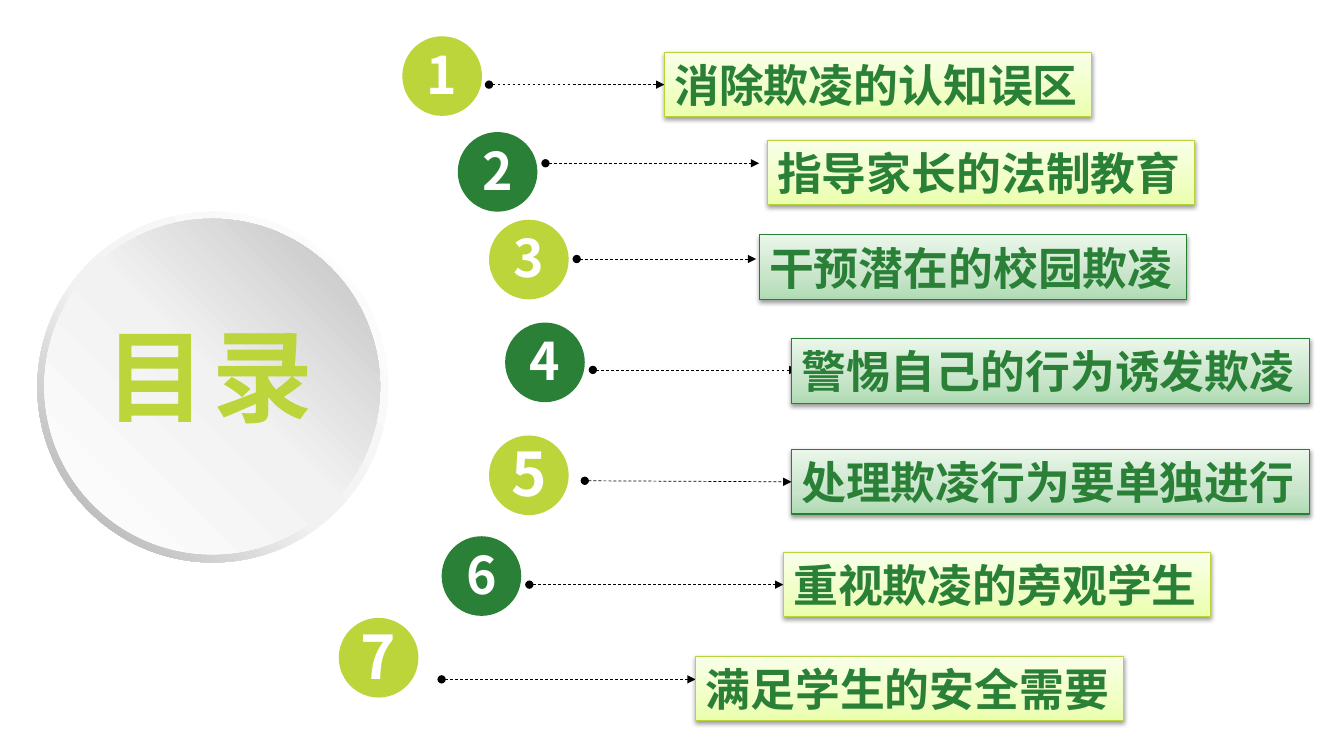
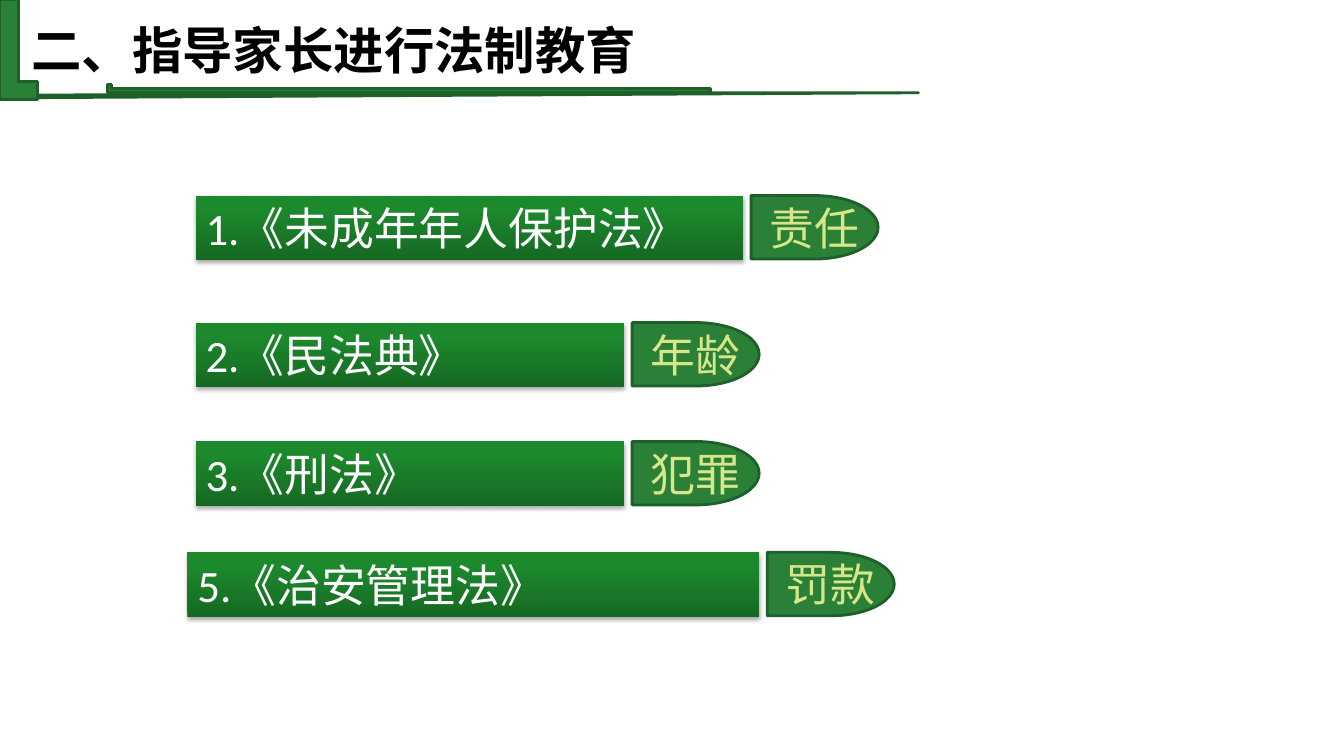
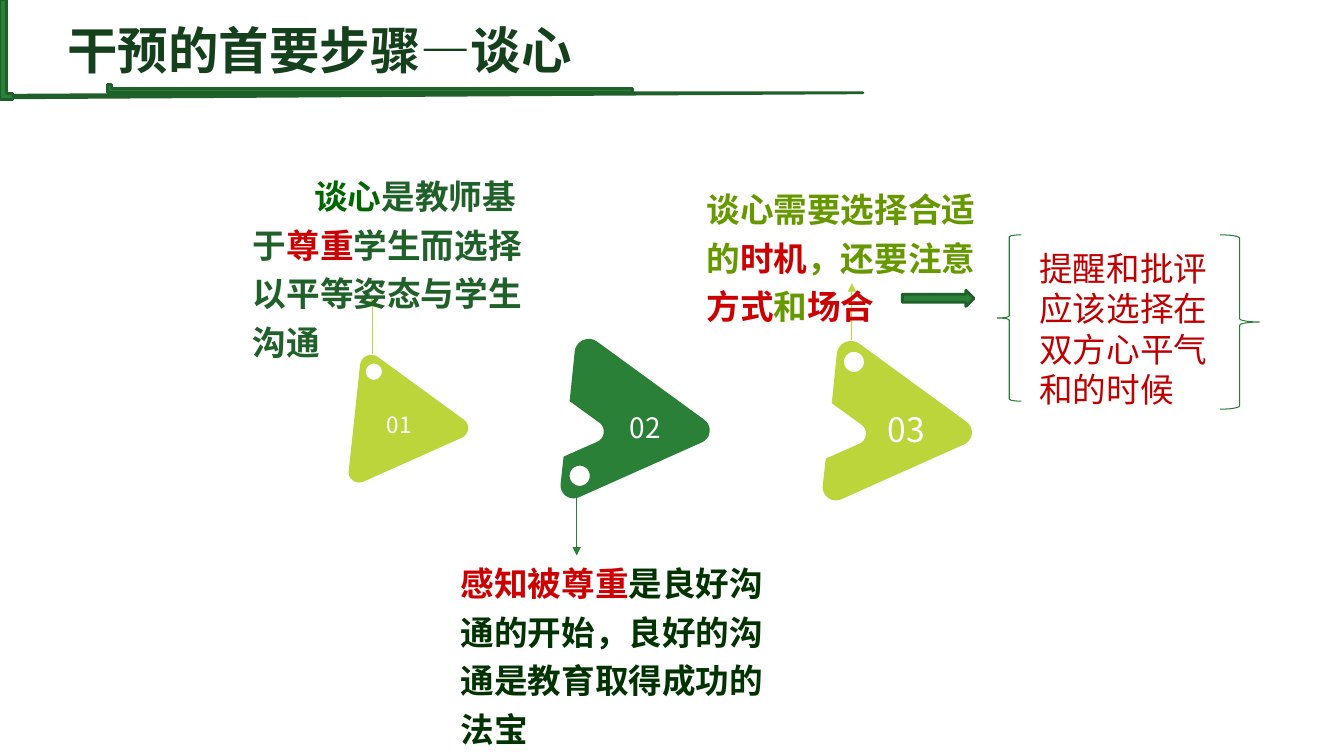
from math import cos, dist, pi, sin

from pptx import Presentation
from pptx.dml.color import RGBColor
from pptx.enum.dml import MSO_LINE
from pptx.enum.shapes import MSO_CONNECTOR, MSO_SHAPE
from pptx.enum.text import MSO_ANCHOR, MSO_AUTO_SIZE, PP_ALIGN
from pptx.oxml import parse_xml
from pptx.oxml.ns import nsdecls, qn
from pptx.util import Emu, Pt

PX = 9144  # 100 px to the inch


class Theme:
    lime, green, dark = "BBD53B", "2A8037", "1F5F29"
    white, black, red, crimson = "FFFFFF", "000000", "CC0000", "C00000"
    edge, pale, ink, moss = "277F34", "D6E689", "15401C", "206029"
    leaf, olive, deep = "006600", "669900", "003300"
    latin, hans, jp = "Calibri", "Noto Sans CJK SC", "Noto Sans CJK JP"
    hero, head, item, body = 72, 36, 32, 24
    # gradients: stops, angle
    tints = {
        "lime": ([(0, "EAFFAC"), (35, "F0FFC4"), (100, "F9FFE9")], 270),
        "green": ([(0, "AFDBB3"), (35, "C8E5CA"), (100, "EAF6EA")], 270),
        "bar": ([(0, "166922"), (80, "1C892D"), (100, "1A8B2B")], 270),
        "ring": ([(0, "FFFFFF"), (55, "F2F2F2"), (100, "A6A6A6")], 135),
        "dial": ([(0, "FFFFFF"), (51, "F2F2F2"), (100, "BFBFBF")], 315),
    }
    edges = {"lime": "B9D436", "green": "277F34"}


T = Theme

# Content
TOPICS = [  # text, tint, disc at, digit size, line from x, to x, y, box at, joined
    ("消除欺凌的认知误区", "lime", (399, 36), 37, (485, 659, 84), (659, 52), True),
    ("指导家长的法制教育", "lime", (454, 131), 37, (541, 753, 162), (761, 139), False),
    ("干预潜在的校园欺凌", "green", (485, 218), 37, (572, 750, 257), (753, 233), False),
    ("警惕自己的行为诱发欺凌", "green", (501, 320), 37, (588, 791, 367), (785, 336), False),
    ("处理欺凌行为要单独进行", "green", (485, 432), 43, (580, 785, 477), (785, 446), True),
    ("重视欺凌的旁观学生", "lime", (438, 532), 37, (525, 777, 580), (777, 548), True),
    ("满足学生的安全需要", "lime", (336, 613), 43, (438, 690, 674), (690, 651), False),
]
LAWS = [  # text, tag, left, top, width
    ("1.《未成年年人保护法》", "责任", 194, 194, 543),
    ("2.《民法典》", "年龄", 194, 320, 425),
    ("3.《刑法》", "犯罪", 194, 438, 425),
    ("5.《治安管理法》", "罚款", 186, 548, 567),
]
STEPS = [  # label, size, colour, at, scale, notch, hole, label middle, line x, from y, to y
    ("01", 16, T.lime, (346, 352), 0.8, False, (31, 21), (396, 421), (369, 351, 296)),
    ("02", 20, T.green, (556, 336), 1, True, (19, 136), (640, 424), (572, 494, 551)),
    ("03", 24, T.lime, (816, 338), 1, True, (31, 21), (899, 426), (845, 337, 281)),
]
NOTES = [  # place, first-line indent, runs
    ((241, 162, 306, 204), 61, [
        ("谈心", T.leaf), ("是教师基于", T.moss), ("尊重", T.red),
        ("学生而选择以平等姿态与学生沟通", T.moss)]),
    ((691, 175, 306, 156), 0, [
        ("谈心需要选择合适的", T.olive), ("时机", T.red), ("，还要注意", T.olive),
        ("方式", T.red), ("和", T.olive), ("场合", T.red)]),
    ((447, 546, 337, 204), 0, [
        ("感知被尊重", T.red),
        ("是良好沟通的开始，良好的沟通是教育取得成功的法宝", T.deep)]),
]
REMIND = "提醒和批评应该选择在双方心平气和的时候"

# Arrowhead corners: x, y, rounding radius
TIP = [(16.5, -11.5, 14), (160.8, 93.7, 13), (-2.5, 166.6, 13)]
NOTCH = [(3, 117, 0), (53.9, 94.5, 11), (9, 62, 0)]


def emu(*vals):
    return [Emu(round(v * PX)) for v in vals]


def rgb(code):
    return RGBColor.from_string(code)


# Shared drawing helpers
def paint(shape, fill):
    if fill is None:
        shape.fill.background()
    elif fill in T.tints:
        stops, angle = T.tints[fill]
        shape.fill.gradient()
        grad = shape._element.spPr.find(qn("a:gradFill"))
        for child in list(grad):
            grad.remove(child)
        gs = "".join(f'<a:gs pos="{p * 1000}"><a:srgbClr val="{c}"/></a:gs>'
                     for p, c in stops)
        grad.append(parse_xml(f'<a:gsLst {nsdecls("a")}>{gs}</a:gsLst>'))
        grad.append(parse_xml(
            f'<a:lin {nsdecls("a")} ang="{angle * 60000}" scaled="0"/>'))
    else:
        shape.fill.solid()
        shape.fill.fore_color.rgb = rgb(fill)


def style(shape, fill, line=None, width=0.75, shade=None):
    paint(shape, fill)
    if line:
        shape.line.color.rgb = rgb(line)
        shape.line.width = Pt(width)
    else:
        shape.line.fill.background()
    shape.shadow.inherit = False
    if shade:
        alpha, gap = shade
        shape._element.spPr.find(qn("a:effectLst")).append(parse_xml(
            f'<a:outerShdw {nsdecls("a")} blurRad="40000" dist="{gap}" '
            f'dir="5400000" rotWithShape="0"><a:srgbClr val="{T.black}">'
            f'<a:alpha val="{alpha * 1000}"/></a:srgbClr></a:outerShdw>'))
    return shape


def draw(slide, kind, box, fill, line=None, width=0.75, shade=None):
    shape = slide.shapes.add_shape(kind, *emu(*box))
    return style(shape, fill, line, width, shade)


def write(shape, runs, size, font=T.latin, bold=False, align=PP_ALIGN.LEFT,
          anchor=MSO_ANCHOR.MIDDLE, wrap=True):
    frame = shape.text_frame
    frame.word_wrap = wrap
    frame.auto_size = MSO_AUTO_SIZE.NONE
    frame.vertical_anchor = anchor
    para = frame.paragraphs[0]
    para.alignment = align
    for text, color in runs:
        run = para.add_run()
        run.text = text
        face = run.font
        face.size, face.bold, face.name = Pt(size), bold, font
        face.color.rgb = rgb(color)
        run._r.get_or_add_rPr().find(qn("a:latin")).addnext(
            parse_xml(f'<a:ea {nsdecls("a")} typeface="{font}"/>'))
    return para


def label(slide, box, *args, **opts):
    return write(slide.shapes.add_textbox(*emu(*box)), *args, **opts)


def arrow(slide, start, end, color, width, head=None):
    link = slide.shapes.add_connector(MSO_CONNECTOR.STRAIGHT, *emu(*start, *end))
    link.line.color.rgb = rgb(color)
    link.line.width = Pt(width)
    if head:
        link.line.dash_style = MSO_LINE.DASH
    ln = link._element.spPr.find(qn("a:ln"))
    for tag, kind in (("headEnd", head), ("tailEnd", "triangle")):
        if kind:
            ln.append(parse_xml(f'<a:{tag} {nsdecls("a")} type="{kind}"/>'))
    link._element.spPr.append(parse_xml(f'<a:effectLst {nsdecls("a")}/>'))
    return link


def title(slide, box, text, size, color, font):
    shape = slide.shapes.title
    shape.left, shape.top, shape.width, shape.height = emu(*box)
    return write(shape, [(text, color)], size, font, True)


def header(slide, left, text, color, font, stripe, step, post):
    title(slide, (left, 13, 732, 71), text, T.head, color, font)
    for kind, box in ((MSO_SHAPE.DIAGONAL_STRIPE, (13, 92, stripe, 5)),
                      (MSO_SHAPE.CORNER, (107, 84, step, 8)),
                      (MSO_SHAPE.CORNER, (0, 0, post, 99))):
        draw(slide, kind, box, T.green, T.dark, 2)


# Arrowhead outline with rounded corners
def toward(a, b, span):
    part = span / dist(a, b)
    return a[0] + (b[0] - a[0]) * part, a[1] + (b[1] - a[1]) * part


def outline(corners, parts=8):
    pts = []
    for i, (x, y, r) in enumerate(corners):
        c, prev, nxt = (x, y), corners[i - 1][:2], corners[(i + 1) % len(corners)][:2]
        if not r:
            pts.append(c)
            continue
        u, v = toward(c, prev, 1), toward(c, nxt, 1)
        w = dist(u, v) / 2  # sine of the half angle
        cut = r * (1 - w * w) ** 0.5 / w
        a, b = toward(c, prev, cut), toward(c, nxt, cut)
        for k in range(parts + 1):
            t = k / parts
            f, g, h = (1 - t) ** 2, 2 * w * t * (1 - t), t * t
            pts.append(tuple((f * a[n] + g * c[n] + h * b[n]) / (f + g + h)
                             for n in (0, 1)))
    return pts


def pointer(slide, at, scale, notch, hole, color):
    ring = [(hole[0] + 10 * cos(k * pi / 16), hole[1] - 10 * sin(k * pi / 16))
            for k in range(32)]
    rim, ring = ([emu(at[0] + x * scale, at[1] + y * scale) for x, y in pts]
                 for pts in (outline(TIP + NOTCH * notch), ring))
    form = slide.shapes.build_freeform(*rim[0])
    form.add_line_segments(rim[1:])
    form.move_to(*ring[0])
    form.add_line_segments(ring[1:])
    style(form.convert_to_shape(), color)


# Slides
def contents(slide):
    links = [arrow(slide, (x, y), (end, y), T.black, 0.5, "oval")
             for _, _, _, _, (x, end, y), _, _ in TOPICS]
    for i, (text, tint, disc, size, _, at, join) in enumerate(TOPICS):
        dot = draw(slide, MSO_SHAPE.OVAL, (*disc, 79, 79), (T.lime, T.green)[i % 2])
        dot.text_frame.margin_bottom = emu(10)[0]
        write(dot, [(str(i + 1), T.white)], size, T.hans, True,
              PP_ALIGN.CENTER, wrap=False)
        box = draw(slide, MSO_SHAPE.RECTANGLE, (*at, 45 * len(text) + 19, 64),
                   tint, T.edges[tint], shade=(38, 20000))
        write(box, [(text, T.green)], T.item, T.hans, True)
        if join:
            links[i].end_connect(box, 1)
    ring = draw(slide, MSO_SHAPE.DONUT, (37, 210, 348, 348), "ring")
    ring.adjustments[0] = 0.05
    draw(slide, MSO_SHAPE.OVAL, (44, 217, 333, 333), "dial")
    para = title(slide, (95, 304, 240, 135), "目录", T.hero, T.lime, T.hans)
    para.runs[0]._r.get_or_add_rPr().set("spc", "400")
    name = slide.shapes.title._element
    name.getparent().append(name)  # bring in front of the dial


def laws(slide):
    header(slide, 21, "二、指导家长进行法制教育", T.black, T.latin, 898, 598, 37)
    for text, tag, x, y, wide in LAWS:
        bar = draw(slide, MSO_SHAPE.RECTANGLE, (x, y, wide, 64), "bar",
                   shade=(35, 23000))
        write(bar, [(text, T.white)], T.item)
        flag = draw(slide, MSO_SHAPE.FLOWCHART_DELAY, (x + wide + 8, y, 126, 63),
                    T.green, T.dark, 2)
        frame = flag.text_frame
        frame.margin_left, frame.margin_right = emu(18, 0)
        write(flag, [(tag, T.pale)], T.item, align=PP_ALIGN.CENTER, wrap=False)


def talk(slide):
    header(slide, 57, "干预的首要步骤—谈心", T.ink, T.jp, 843, 520, 13)
    for text, size, color, at, scale, notch, hole, (cx, cy), (x, y, end) in STEPS:
        pointer(slide, at, scale, notch, hole, color)
        arrow(slide, (x, y), (x, end), color, 0.75)
        label(slide, (cx - 30, cy - 25, 60, 50), [(text, T.white)], size, T.hans,
              align=PP_ALIGN.CENTER, wrap=False)
    for box, indent, runs in NOTES:
        para = label(slide, box, runs, T.body, bold=True, anchor=MSO_ANCHOR.TOP)
        para.line_spacing = 1.2
        if indent:
            para._p.get_or_add_pPr().set("indent", str(indent * PX))
    # Reminder between braces
    draw(slide, MSO_SHAPE.RIGHT_ARROW, (895, 288, 71, 16), T.green, T.dark, 2)
    draw(slide, MSO_SHAPE.LEFT_BRACE, (989, 233, 24, 165), None, T.edge)
    draw(slide, MSO_SHAPE.RIGHT_BRACE, (1210, 233, 39, 173), None, T.edge)
    label(slide, (1021, 241, 197, 172), [(REMIND, T.crimson)], T.body,
          anchor=MSO_ANCHOR.TOP)


def main():
    deck = Presentation()
    deck.slide_width, deck.slide_height = emu(1333, 750)
    for build in (contents, laws, talk):
        build(deck.slides.add_slide(deck.slide_layouts[5]))
    deck.save("out.pptx")


if __name__ == "__main__":
    main()
